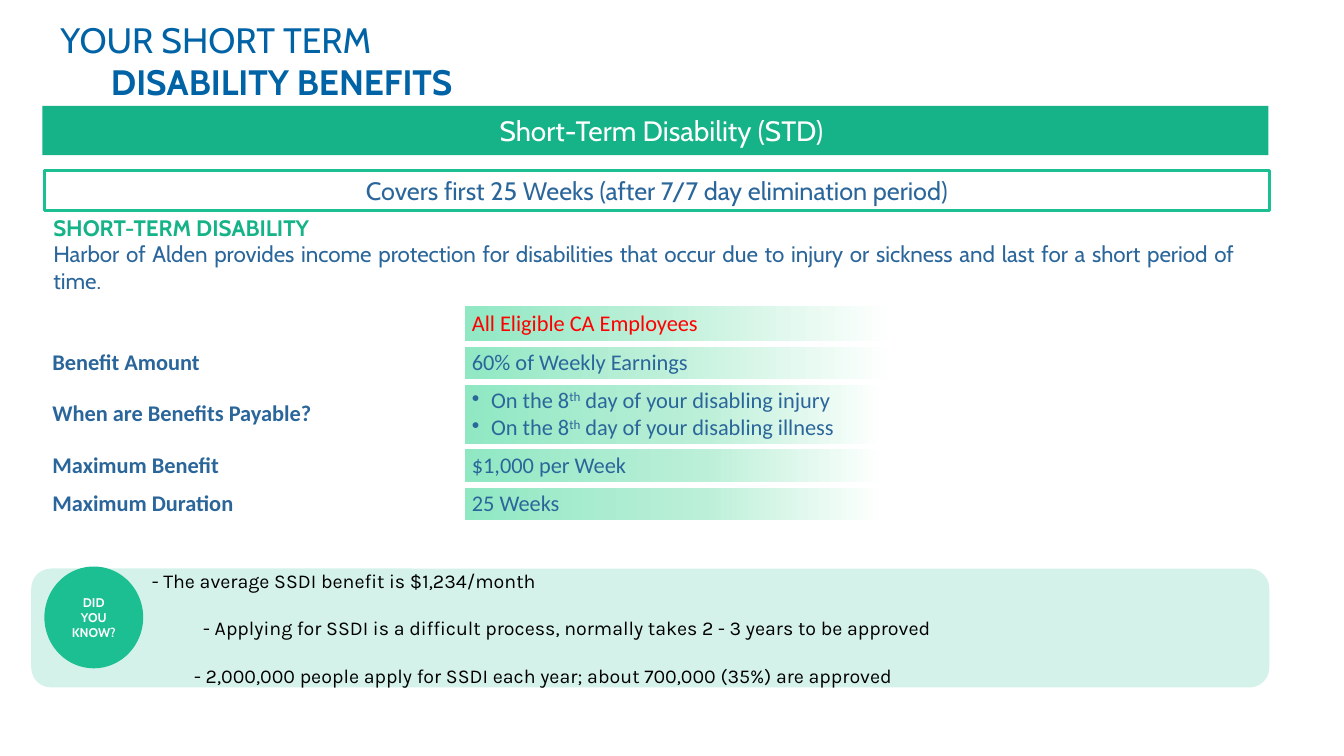
import pptx
import pptx.dml.color
import pptx.enum.shapes
import pptx.enum.text
import pptx.oxml
import pptx.oxml.ns
import pptx.util

Inches, Pt = pptx.util.Inches, pptx.util.Pt
SHAPE = pptx.enum.shapes.MSO_SHAPE
ALIGN = pptx.enum.text.PP_ALIGN
ANCHOR = pptx.enum.text.MSO_ANCHOR
NAMESPACE = pptx.oxml.ns.nsdecls("a")

GREEN, MINT, BLUE, TITLE_BLUE = "16B388", "1CBF92", "2B669B", "0063A6"
WHITE, BLACK, RED = "FFFFFF", "000000", "FF0000"

# Positions, in percent, of the second and third gradient stops
SHORT_FADE, LONG_FADE = (39, 89), (50, 87)
BENEFITS = [
    ("", ["All Eligible CA Employees"], 0.38, SHORT_FADE),
    ("Benefit Amount", ["60% of Weekly Earnings"], 0.38, SHORT_FADE),
    ("When are Benefits Payable?",
     ["On the 8|th| day of your disabling injury",
      "On the 8|th| day of your disabling illness"], 0.64, LONG_FADE),
    ("Maximum Benefit", ["$1,000 per Week"], 0.38, LONG_FADE),
    ("Maximum Duration", ["25 Weeks"], 0.38, LONG_FADE),
]
FACTS = [
    ("- The average SSDI benefit is $1,234/month", 1.04),
    ("- Applying for SSDI is a difficult process, normally takes 2 - 3 years to be approved", 1.55),
    ("- 2,000,000 people apply for SSDI each year; about 700,000 (35%) are approved", 1.46),
]


def rgb(value):
    return pptx.dml.color.RGBColor.from_string(value)


def add_run(paragraph, text, size, color, font="Cabin", bold=False):
    run = paragraph.add_run()
    run.text = text
    run.font.size, run.font.name, run.font.bold = Pt(size), font, bold
    run.font.color.rgb = rgb(color)
    return run


def paragraphs(frame, count):
    """Return the first paragraph of the frame and as many new ones as needed."""
    return [frame.paragraphs[0]] + [frame.add_paragraph() for _ in range(count - 1)]


def indent(paragraph, left, first=0):
    properties = paragraph._p.get_or_add_pPr()
    properties.set("marL", str(Inches(left)))
    properties.set("indent", str(Inches(first)))
    return properties


def add_panel(shapes, kind, box, fill=None, line=None):
    panel = shapes.add_shape(kind, *map(Inches, box))
    panel.shadow.inherit = False
    if fill:
        panel.fill.solid()
        panel.fill.fore_color.rgb = rgb(fill)
    else:
        panel.fill.background()
    if line:
        panel.line.color.rgb = rgb(line)
        panel.line.width = Pt(2.25)
    else:
        panel.line.fill.background()
    panel.text_frame.word_wrap = True
    panel.text_frame.vertical_anchor = ANCHOR.MIDDLE
    return panel


def set_title(slide, box):
    title = slide.shapes.title
    title.left, title.top, title.width, title.height = map(Inches, box)
    frame = title.text_frame
    frame.auto_size = pptx.enum.text.MSO_AUTO_SIZE.NONE
    frame.vertical_anchor = ANCHOR.TOP
    frame.margin_top = Inches(0.07)
    lines = [("YOUR SHORT TERM", 0.5, False), ("DISABILITY BENEFITS", 1, True)]
    for paragraph, (text, left, bold) in zip(paragraphs(frame, len(lines)), lines):
        paragraph.alignment = ALIGN.LEFT
        indent(paragraph, left)
        add_run(paragraph, text, 25.2, TITLE_BLUE, bold=bold)


def add_banner(slide, box, text, size, color, fill=None, line=None):
    banner = add_panel(slide.shapes, SHAPE.RECTANGLE, box, fill, line)
    paragraph = banner.text_frame.paragraphs[0]
    paragraph.alignment = ALIGN.CENTER
    add_run(paragraph, text, size, color)
    return banner


def add_introduction(slide, box):
    frame = slide.shapes.add_textbox(*map(Inches, box)).text_frame
    frame.word_wrap = True
    heading, summary = paragraphs(frame, 2)
    add_run(heading, "SHORT-TERM DISABILITY", 16, GREEN, bold=True)
    summary.alignment = ALIGN.JUSTIFY
    add_run(summary, "Harbor of Alden provides income protection for disabilities that occur "
            "due to injury or sickness and last for a short period of time.", 16, BLUE)


def style_benefit_cell(cell, fade):
    """Give the cell white borders and a green fill that fades to white."""
    properties = cell._tc.get_or_add_tcPr()
    for side in "LRTB":
        properties.append(pptx.oxml.parse_xml(
            f'<a:ln{side} {NAMESPACE} w="{Pt(4.5)}"><a:solidFill><a:srgbClr val="{WHITE}"/>'
            f'</a:solidFill></a:ln{side}>'))
    stops = "".join(f'<a:gs pos="{position * 1000}"><a:srgbClr val="{color}"/></a:gs>'
                    for position, color in zip((0, *fade), ("90E8C3", "BCEFD8", WHITE)))
    properties.append(pptx.oxml.parse_xml(
        f'<a:gradFill {NAMESPACE}><a:gsLst>{stops}</a:gsLst><a:lin ang="0"/></a:gradFill>'))


def write_benefit(cell, lines, color):
    """Write the lines, bulleted if several; text between bars is superscript."""
    for paragraph, line in zip(paragraphs(cell.text_frame, len(lines)), lines):
        if len(lines) > 1:
            indent(paragraph, 0.19, -0.19).append(
                pptx.oxml.parse_xml(f'<a:buChar {NAMESPACE} char="•"/>'))
        for index, part in enumerate(line.split("|")):
            run = add_run(paragraph, part, 16, color, "Calibri")
            if index % 2:
                run._r.get_or_add_rPr().set("baseline", "30000")


def add_benefits(slide, box):
    table = slide.shapes.add_table(len(BENEFITS), 2, *map(Inches, box)).table
    table.first_row = table.horz_banding = False
    for column, width in zip(table.columns, (4.16, 4.82)):
        column.width = Inches(width)
    for index, (label, lines, height, fade) in enumerate(BENEFITS):
        table.rows[index].height = Inches(height)
        name, benefit = table.rows[index].cells
        name.vertical_anchor = benefit.vertical_anchor = ANCHOR.MIDDLE
        name.fill.background()
        if label:
            add_run(name.text_frame.paragraphs[0], label, 16, BLUE, "Calibri", True)
        style_benefit_cell(benefit, fade)
        write_benefit(benefit, lines, BLUE if label else RED)


def add_did_you_know(slide, box):
    left, top, width, height = box
    group = slide.shapes.add_group_shape()
    panel = add_panel(group.shapes, SHAPE.ROUNDED_RECTANGLE,
                      (left, top + 0.02, width, height - 0.02), MINT)
    tint = panel.fill._xPr.find(".//" + pptx.oxml.ns.qn("a:srgbClr"))
    tint.append(pptx.oxml.parse_xml(f'<a:alpha {NAMESPACE} val="19000"/>'))
    fact_lines = paragraphs(panel.text_frame, len(FACTS))
    for paragraph, (fact, offset) in zip(fact_lines, FACTS):
        paragraph.alignment = ALIGN.LEFT
        indent(paragraph, offset)
        add_run(paragraph, fact, 14, BLACK, "Karla")
    for paragraph in fact_lines[1:]:
        paragraph.space_before = Pt(17)

    badge = add_panel(group.shapes, SHAPE.OVAL, (left + 0.13, top, 0.98, 1.01), MINT)
    frame = badge.text_frame
    frame.margin_left = frame.margin_right = 0
    words = ["DID", "YOU", "KNOW?"]
    for paragraph, word in zip(paragraphs(frame, len(words)), words):
        paragraph.alignment = ALIGN.CENTER
        add_run(paragraph, word, 9, WHITE, bold=True)


def main():
    deck = pptx.Presentation()
    deck.slide_width, deck.slide_height = Inches(13.33), Inches(7.5)
    slide = deck.slides.add_slide(deck.slide_layouts.get_by_name("Title Only"))
    set_title(slide, (0, 0.11, 13.32, 0.87))
    plan = add_banner(slide, (0.42, 1.05, 12.16, 0.49), "Short-Term Disability (STD)",
                      20, WHITE, fill=GREEN)
    plan.text_frame.margin_left = Inches(0.22)
    add_banner(slide, (0.44, 1.69, 12.15, 0.4),
               "Covers first 25 Weeks (after 7/7 day elimination period)", 18, BLUE, line=MINT)
    add_introduction(slide, (0.43, 2.07, 11.92, 0.91))
    add_benefits(slide, (0.42, 3.01, 8.98, 2.17))
    add_did_you_know(slide, (0.31, 5.62, 12.28, 1.2))
    deck.save("out.pptx")


if __name__ == "__main__":
    main()
